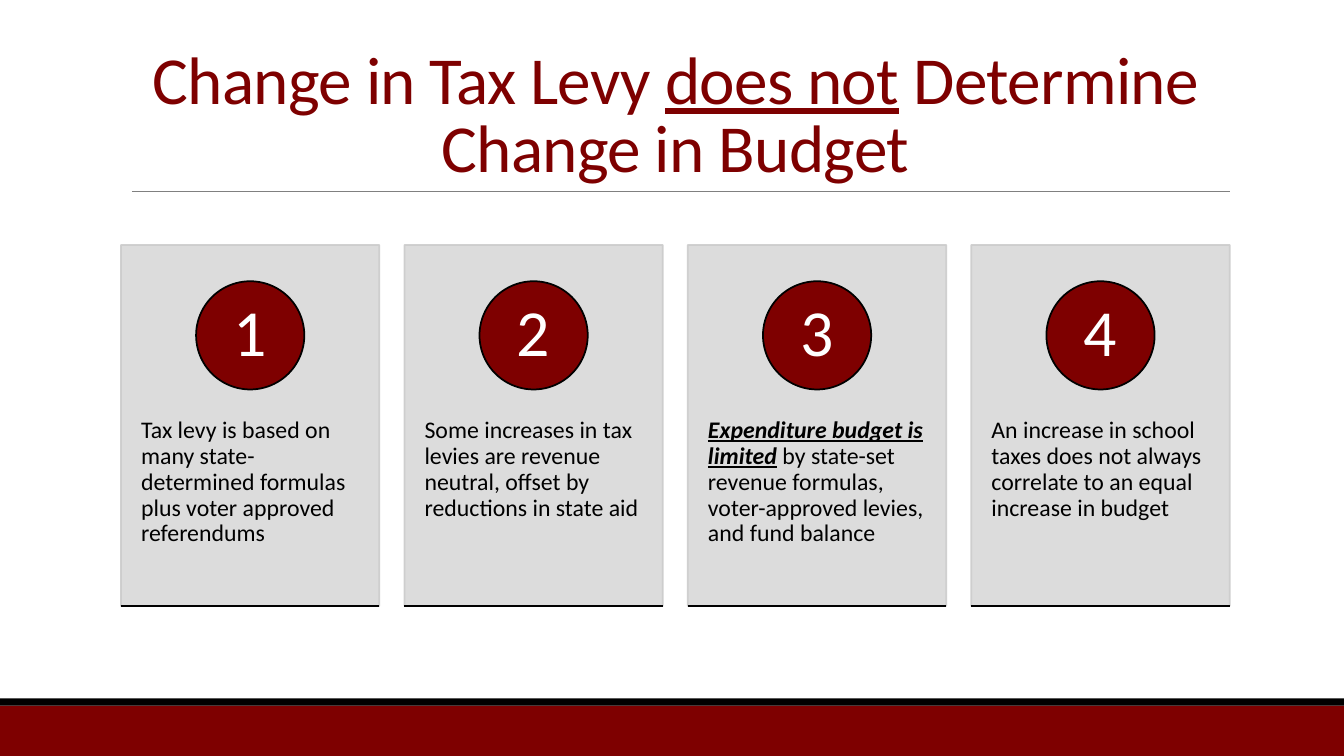
import dataclasses
import typing

import pptx
import pptx.dml.color
import pptx.enum.shapes
import pptx.enum.text
import pptx.oxml
import pptx.oxml.ns
import pptx.shapes.autoshape
import pptx.shapes.connector
import pptx.shapes.shapetree
import pptx.text.text
import pptx.util

Pt = pptx.util.Pt
Align = pptx.enum.text.PP_ALIGN
Anchor = pptx.enum.text.MSO_ANCHOR
Preset = pptx.enum.shapes.MSO_SHAPE


@dataclasses.dataclass(frozen=True)
class Theme:
    font: str = "Calibri"
    maroon: str = "7E0000"
    black: str = "000000"
    white: str = "FFFFFF"
    card_fill: str = "D9D9D9"
    card_edge: str = "CCCCCC"
    title_rule: str = "808080"
    title_size: float = 48
    number_size: float = 47
    body_size: float = 17
    outline: float = 1.25
    hairline: float = 0.5


class Phrase(typing.NamedTuple):
    text: str
    emphasis: dict[str, bool] = {}


class Box(typing.NamedTuple):
    left: float
    top: float
    width: float
    height: float


class Band(typing.NamedTuple):
    box: Box
    color: str


THEME = Theme()
SLIDE_WIDTH, SLIDE_HEIGHT = 960, 540
TITLE_BOX = Box(86.4, 22.3, 792, 114.5)
CARD_WIDTH, CARD_HEIGHT, CARD_TOP = 184.6, 257.8, 175
CARD_PITCH = (TITLE_BOX.width - CARD_WIDTH) / 3
BADGE_TOP, BADGE_SIZE = 200.9, 77.3
BODY_TOP, BODY_HEIGHT = 272.9, 154.7

BANDS = [
    Band(Box(0, 504, SLIDE_WIDTH, 36), THEME.maroon),
    Band(Box(0, 498.9, SLIDE_WIDTH, 5.1), THEME.black),
]
TITLE = [
    Phrase("Change in Tax Levy "),
    Phrase("does not", {"underline": True}),
    Phrase(" Determine Change in Budget"),
]
REASONS = [
    [Phrase("Tax levy is based on many state-determined formulas plus voter approved referendums")],
    [Phrase("Some increases in tax levies are revenue neutral, offset by reductions in state aid")],
    [
        Phrase("Expenditure budget is limited", {"bold": True, "italic": True, "underline": True}),
        Phrase(" by state-set revenue formulas, voter-approved levies, and fund balance"),
    ],
    [Phrase("An increase in school taxes does not always correlate to an equal increase in budget")],
]


def rgb(color: str) -> pptx.dml.color.RGBColor:
    return pptx.dml.color.RGBColor.from_string(color)


def apply(target: typing.Any, values: dict[str, typing.Any]) -> None:
    for name, value in values.items():
        setattr(target, name, value)


def points(box: Box) -> list[pptx.util.Length]:
    return [Pt(length) for length in box]


def write(
    frame: pptx.text.text.TextFrame,
    phrases: list[Phrase],
    size: float,
    color: str,
    frame_format: dict[str, typing.Any],
    paragraph_format: dict[str, typing.Any],
) -> None:
    apply(frame, {"word_wrap": True, **frame_format})
    paragraph = frame.paragraphs[0]
    apply(paragraph, paragraph_format)
    for phrase in phrases:
        run = paragraph.add_run()
        run.text = phrase.text
        apply(run.font, {"name": THEME.font, "size": Pt(size), **phrase.emphasis})
        run.font.color.rgb = rgb(color)


def add_block(
    shapes: pptx.shapes.shapetree.SlideShapes,
    preset: Preset,
    box: Box,
    fill: str,
    edge: str | None = None,
) -> pptx.shapes.autoshape.Shape:
    block = shapes.add_shape(preset, *points(box))
    block.shadow.inherit = False
    block.fill.solid()
    block.fill.fore_color.rgb = rgb(fill)
    if edge:
        block.line.color.rgb = rgb(edge)
        block.line.width = Pt(THEME.outline)
    else:
        block.line.fill.background()
    return block


def make_translucent(block: pptx.shapes.autoshape.Shape, percent: int) -> None:
    for color in block._element.spPr.iter(pptx.oxml.ns.qn("a:srgbClr")):
        alpha = pptx.oxml.parse_xml(f'<a:alpha {pptx.oxml.ns.nsdecls("a")} val="{percent * 1000}"/>')
        color.append(alpha)


def add_rule(
    shapes: pptx.shapes.shapetree.SlideShapes,
    left: float,
    right: float,
    top: float,
    color: str,
    width: float,
) -> pptx.shapes.connector.Connector:
    straight = pptx.enum.shapes.MSO_CONNECTOR.STRAIGHT
    rule = shapes.add_connector(straight, Pt(left), Pt(top), Pt(right), Pt(top))
    rule.line.color.rgb = rgb(color)
    rule.line.width = Pt(width)
    rule._element.spPr.append(pptx.oxml.parse_xml(f'<a:effectLst {pptx.oxml.ns.nsdecls("a")}/>'))
    return rule


def add_title(title: pptx.shapes.autoshape.Shape) -> None:
    apply(title, dict(zip(Box._fields, points(TITLE_BOX))))
    write(
        title.text_frame, TITLE, THEME.title_size, THEME.maroon,
        {"vertical_anchor": Anchor.BOTTOM, "auto_size": pptx.enum.text.MSO_AUTO_SIZE.NONE},
        {"alignment": Align.CENTER, "line_spacing": 0.85, "space_before": Pt(0)},
    )
    for run in title.text_frame.paragraphs[0].runs:
        run.font._element.set("spc", "-50")


def add_card(
    shapes: pptx.shapes.shapetree.SlideShapes, number: int, reason: list[Phrase]
) -> None:
    left = TITLE_BOX.left + (number - 1) * CARD_PITCH
    card_box = Box(left, CARD_TOP, CARD_WIDTH, CARD_HEIGHT)
    card = add_block(shapes, Preset.RECTANGLE, card_box, THEME.card_fill, THEME.card_edge)
    make_translucent(card, 90)

    body = shapes.add_textbox(*points(Box(left, BODY_TOP, CARD_WIDTH, BODY_HEIGHT)))
    write(
        body.text_frame, reason, THEME.body_size, THEME.black,
        {
            "margin_left": Pt(14.4), "margin_right": Pt(14.4),
            "margin_top": Pt(25.9), "margin_bottom": Pt(25.9),
            "vertical_anchor": Anchor.TOP,
        },
        {"alignment": Align.LEFT, "line_spacing": 0.9},
    )

    badge_box = Box(left + (CARD_WIDTH - BADGE_SIZE) / 2, BADGE_TOP, BADGE_SIZE, BADGE_SIZE)
    badge = add_block(shapes, Preset.OVAL, badge_box, THEME.maroon, THEME.black)
    write(
        badge.text_frame, [Phrase(str(number))], THEME.number_size, THEME.white,
        {
            "margin_left": Pt(6), "margin_right": Pt(6),
            "margin_top": Pt(0.7), "margin_bottom": Pt(0.7),
            "vertical_anchor": Anchor.MIDDLE,
        },
        {"alignment": Align.CENTER, "line_spacing": 0.9},
    )
    add_rule(shapes, left, left + CARD_WIDTH, CARD_TOP + CARD_HEIGHT, THEME.black, THEME.outline)


def main() -> None:
    deck = pptx.Presentation()
    apply(deck, {"slide_width": Pt(SLIDE_WIDTH), "slide_height": Pt(SLIDE_HEIGHT)})
    slide = deck.slides.add_slide(deck.slide_layouts[5])
    for band in BANDS:
        add_block(slide.shapes, Preset.RECTANGLE, band.box, band.color)
    add_rule(slide.shapes, 94.3, 878.4, 136.8, THEME.title_rule, THEME.hairline)
    add_title(slide.shapes.title)
    for number, reason in enumerate(REASONS, start=1):
        add_card(slide.shapes, number, reason)
    deck.save("out.pptx")


if __name__ == "__main__":
    main()
